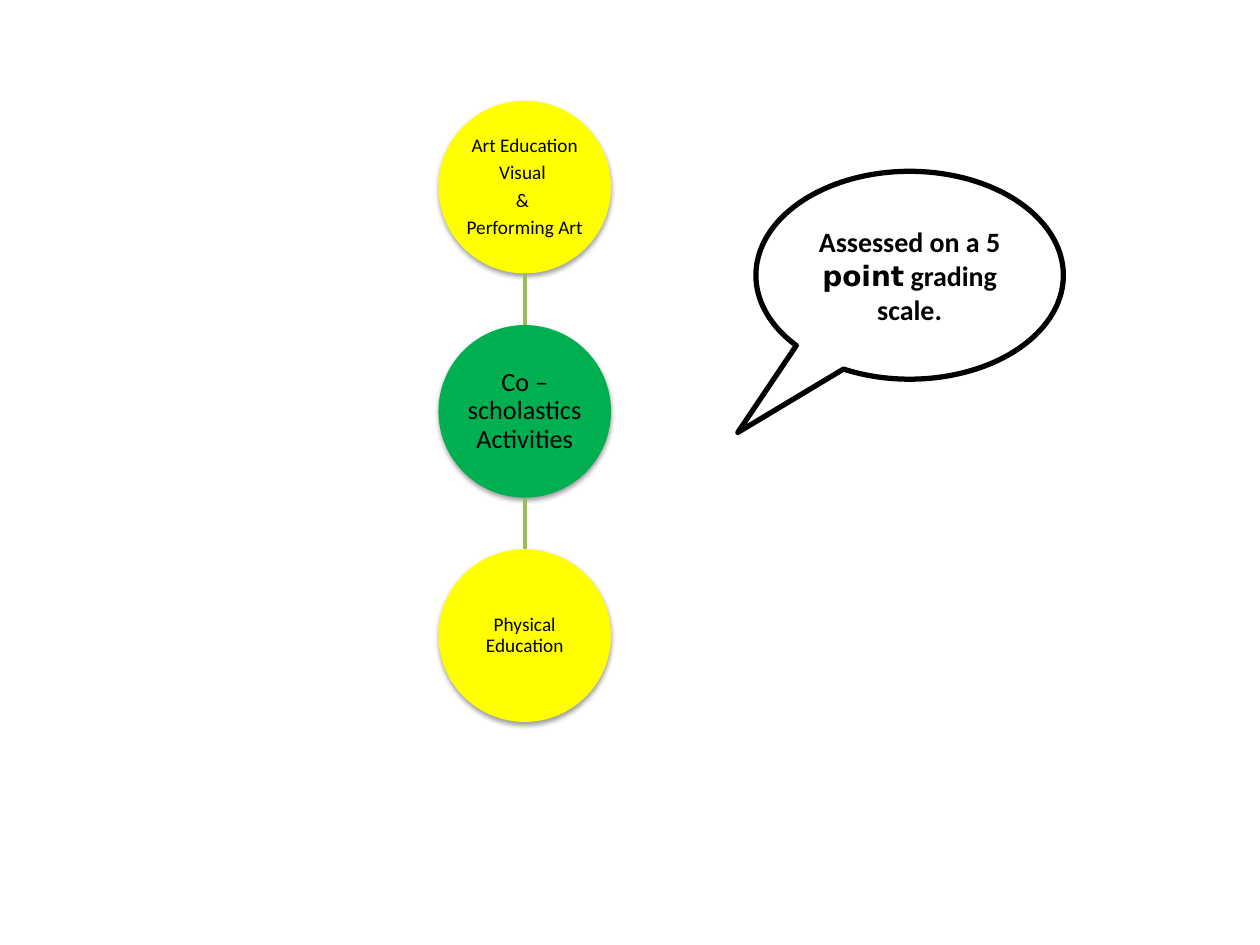
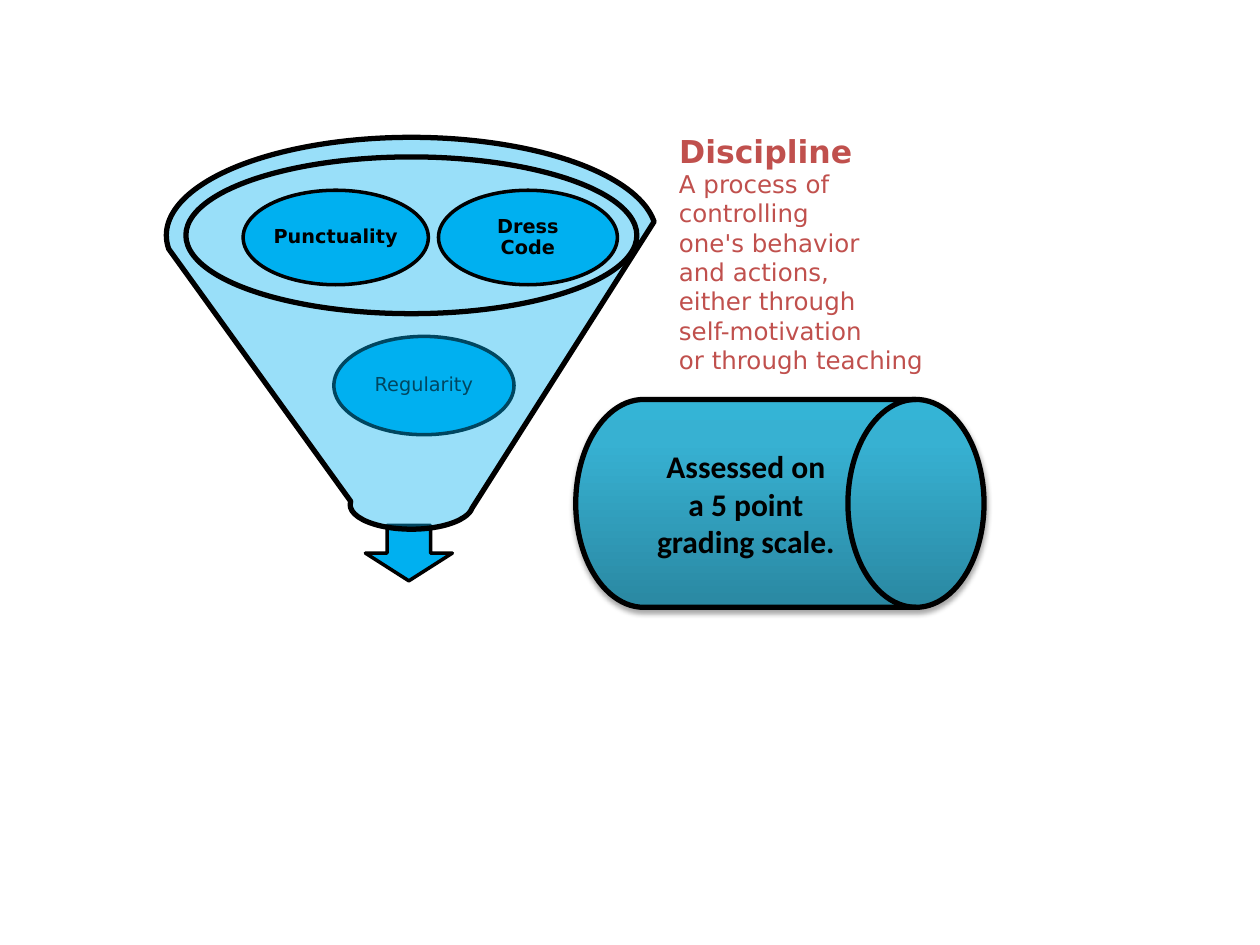
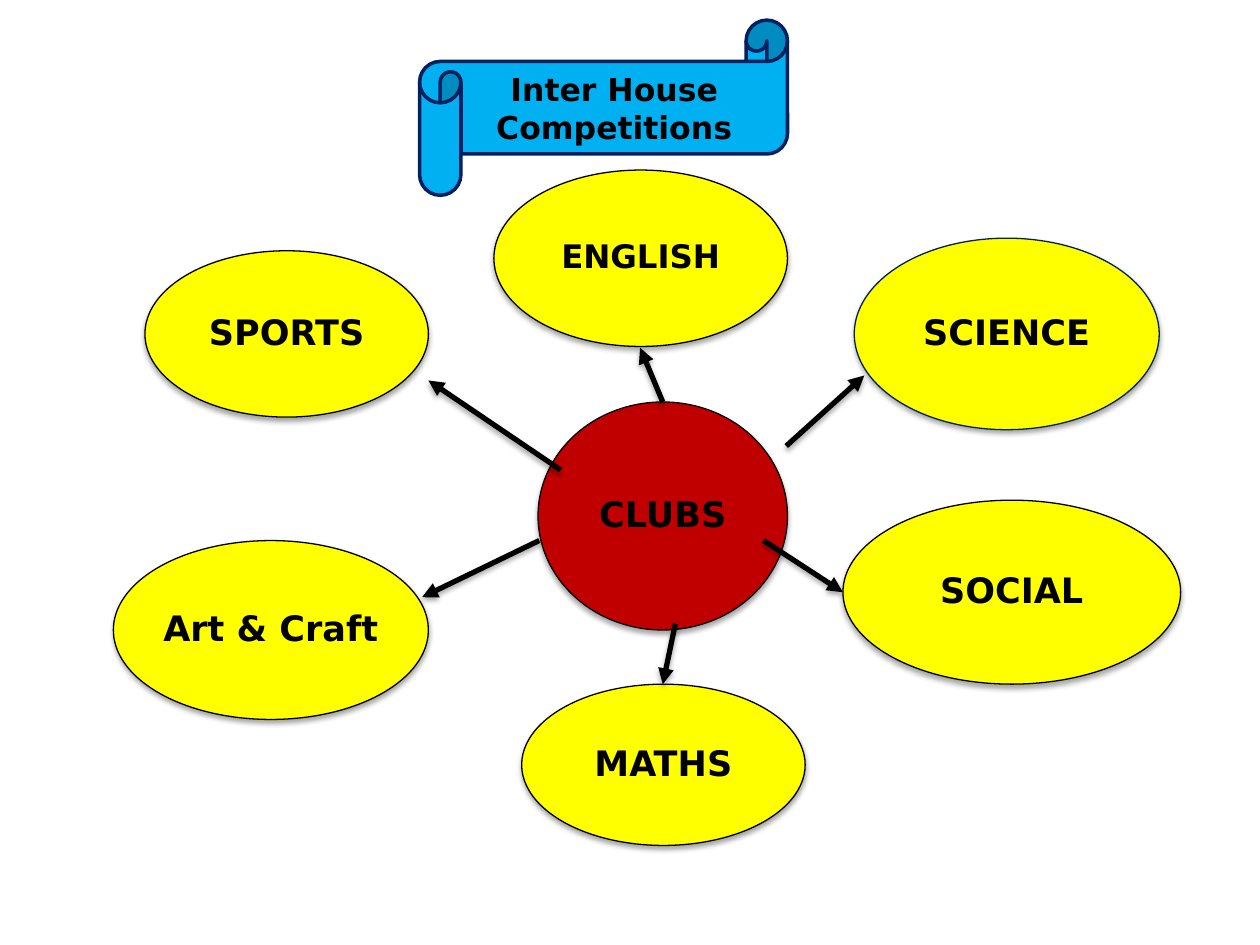
from copy import deepcopy
from dataclasses import dataclass

from pptx import Presentation
from pptx.dml.color import RGBColor
from pptx.enum.shapes import MSO_CONNECTOR as Connector, MSO_SHAPE as Preset
from pptx.enum.text import MSO_ANCHOR as Anchor, MSO_AUTO_SIZE as AutoSize, PP_ALIGN as Align
from pptx.oxml import parse_xml
from pptx.oxml.ns import nsdecls, qn
from pptx.util import Inches, Pt


@dataclass(frozen=True)
class Theme:
    black: str = "000000"
    yellow: str = "FFFF00"
    green: str = "00B050"
    olive: str = "9BBB59"
    sky: str = "00B0F0"
    navy: str = "002060"
    red: str = "C00000"
    brick: str = "C0504D"
    drum: tuple = ((0, "2A88A2"), (0.8, "37B1D2"), (1, "34B4D6"))
    body_font: str = "Calibri"
    display_font: str = "DejaVu Sans"
    small: float = 11
    text: float = 14
    core: float = 15
    callout: float = 16
    heading: float = 18
    english: float = 18.5
    club: float = 20
    hairline: float = 0.75
    outline: float = 2
    heavy: float = 3


@dataclass(frozen=True)
class Box:
    left: float
    top: float
    width: float
    height: float

    def inner(self, dx, dy, width, height):
        return Box(self.left + dx, self.top + dy, width, height)

    def inches(self):
        return [Inches(v) for v in (self.left, self.top, self.width, self.height)]


THEME = Theme()
LAYOUT_TITLE_ONLY, LAYOUT_BLANK = 5, 6


# Shared formatting
def apply(target, values):
    for name, value in values.items():
        setattr(target, name, value)


def set_shadow(shape, strength=35, distance=1.8):
    """Soft shadow straight below the shape; strength 0 means none."""
    effects = parse_xml(f"<a:effectLst {nsdecls('a')}/>")
    if strength:
        effects.append(parse_xml(
            f'<a:outerShdw {nsdecls("a")} blurRad="{Pt(3.1)}" dist="{Pt(distance)}" '
            f'dir="5400000" rotWithShape="0"><a:srgbClr val="000000">'
            f'<a:alpha val="{strength * 1000}"/></a:srgbClr></a:outerShdw>'))
    shape._element.spPr.append(effects)


def set_line(shape, color, width):
    if color is None:
        shape.line.fill.background()
        return
    shape.line.color.rgb = RGBColor.from_string(color)
    shape.line.width = Pt(width)


def set_fill(shape, color, opacity=100):
    if color is None:
        shape.fill.background()
        return
    shape.fill.solid()
    shape.fill.fore_color.rgb = RGBColor.from_string(color)
    if opacity < 100:
        tint = shape._element.spPr.find(qn("a:solidFill"))[0]
        tint.append(parse_xml(f'<a:alpha {nsdecls("a")} val="{opacity * 1000}"/>'))


def set_gradient(shape, stops):
    fill = shape.fill
    fill.gradient()
    fill.gradient_angle = 90
    stop_list = shape._element.spPr.find(qn("a:gradFill")).find(qn("a:gsLst"))
    while len(stop_list) < len(stops):
        stop_list.append(deepcopy(stop_list[-1]))
    for stop, (position, color) in zip(fill.gradient_stops, stops):
        stop.position = position
        stop.color.rgb = RGBColor.from_string(color)


def write(shape, lines, size, font=THEME.display_font, bold=False, color=THEME.black,
          align=Align.CENTER, anchor=Anchor.MIDDLE, inset=None, tight=False):
    """Each line is a string or a list of (text, font) spans."""
    frame = shape.text_frame
    apply(frame, {"word_wrap": True, "auto_size": AutoSize.NONE, "vertical_anchor": anchor})
    if inset is not None:
        sides = ("left", "right", "top", "bottom")
        apply(frame, {f"margin_{side}": Inches(inset) for side in sides})
    for number, line in enumerate(lines):
        para = frame.add_paragraph() if number else frame.paragraphs[0]
        para.alignment = align
        if tight:
            para.line_spacing = 0.9
            if number < len(lines) - 1:
                para.space_after = Pt(0.35 * size)
        for text, face in [(line, font)] if isinstance(line, str) else line:
            span = para.add_run()
            span.text = text
            apply(span.font, {"name": face, "size": Pt(size), "bold": bold})
            span.font.color.rgb = RGBColor.from_string(color)


def add_preset(page, kind, box, fill=None, line=None, width=THEME.outline, opacity=100):
    shape = page.shapes.add_shape(kind, *box.inches())
    shape.shadow.inherit = False
    set_fill(shape, fill, opacity)
    set_line(shape, line, width)
    return shape


def replace_shadow(shape, **values):
    shape.shadow.inherit = True
    set_shadow(shape, **values)


def add_line(page, start, end, color, width):
    line = page.shapes.add_connector(Connector.STRAIGHT, *map(Inches, (*start, *end)))
    set_line(line, color, width)
    return line


def add_arrow(page, start, end):
    arrow = add_line(page, start, end, THEME.black, THEME.heavy)
    arrow.line._get_or_add_ln().append(parse_xml(f'<a:tailEnd {nsdecls("a")} type="triangle"/>'))
    set_shadow(arrow)


def place_title(page, box, text, **style):
    title = page.shapes.title
    apply(title, dict(zip(("left", "top", "width", "height"), box.inches())))
    write(title, [text], THEME.heading, bold=True, **style)
    page.shapes._spTree.append(title._element)  # in front of its backdrop


# Slide 1: chain of activities
def add_activity_chain(page, box):
    circles = [
        (["Art Education", "Visual ", "& ", "Performing Art"], THEME.yellow, THEME.small),
        (["Co –scholastics Activities"], THEME.green, THEME.core),
        (["Physical Education"], THEME.yellow, THEME.small),
    ]
    size = box.width
    step = (box.height - size) / (len(circles) - 1)
    middle = box.left + size / 2
    for row, (lines, color, text_size) in enumerate(circles):
        spot = box.inner(0, row * step, size, size)
        circle = add_preset(page, Preset.OVAL, spot, color)
        replace_shadow(circle, strength=38, distance=1.6)
        write(circle, lines, text_size, THEME.body_font, inset=0.01, tight=True)
        if row:
            link = add_line(page, (middle, spot.top - step + size), (middle, spot.top),
                            THEME.olive, THEME.outline)
            set_shadow(link, strength=0)


def add_grading_callout(page, box):
    callout = add_preset(page, Preset.OVAL_CALLOUT, box, None, THEME.black, THEME.heavy)
    callout.adjustments[0], callout.adjustments[1] = -0.559, 0.756
    spans = [("Assessed on a 5 ", THEME.body_font), ("point", THEME.display_font),
             (" grading scale.", THEME.body_font)]
    write(callout, [spans], THEME.callout, bold=True)


# Slide 2: discipline funnel
def add_funnel(page, box):
    add_preset(page, Preset.OVAL, box.inner(0.16, 0.17, 3.58, 1.24), THEME.sky, opacity=40)
    add_preset(page, Preset.DOWN_ARROW, box.inner(1.58, 3.08, 0.69, 0.44),
               THEME.sky, THEME.black)
    habits = [
        ("Dress Code", True, (2.16, 0.42, 1.42, 0.75)),
        ("Punctuality", True, (0.61, 0.42, 1.47, 0.75)),
        ("Regularity", False, (1.33, 1.58, 1.43, 0.78)),
    ]
    for label, bold, place in habits:
        habit = add_preset(page, Preset.OVAL, box.inner(*place), THEME.sky, THEME.black)
        write(habit, [label], THEME.small, bold=bold, inset=0.02, tight=True)
    add_preset(page, Preset.FUNNEL, box, THEME.sky, THEME.black, THEME.heavy, opacity=40)


def add_grading_drum(page, box):
    drum = add_preset(page, Preset.FLOWCHART_DIRECT_ACCESS_STORAGE, box,
                      None, THEME.black, THEME.heavy)
    set_gradient(drum, THEME.drum)
    replace_shadow(drum)
    write(drum, ["Assessed on a 5 point grading scale."], THEME.heading,
          THEME.body_font, bold=True)


def add_definition(page, box):
    style = {"color": THEME.brick, "align": Align.LEFT, "anchor": Anchor.TOP}
    title_height = 0.39
    place_title(page, box.inner(0, 0, box.width, title_height), "Discipline", **style)
    body = box.inner(0, 0.29, box.width, box.height - 0.29)
    note = page.shapes.add_textbox(*body.inches())
    write(note, ["A process of", "controlling", "one's behavior", "and actions,",
                 "either through", "self-motivation", "or through teaching"],
          THEME.text, **style)


# Slide 3: clubs around a hub
def add_club(page, box, label, fill=THEME.yellow, line=THEME.black, size=THEME.club):
    club = add_preset(page, Preset.OVAL, box, fill, line, THEME.hairline)
    replace_shadow(club)
    write(club, [label], size, bold=True, inset=0.01, tight=True)


def add_club_map(page, box):
    add_club(page, box.inner(3.37, 1.84, 1.98, 1.81), "CLUBS", THEME.red)
    clubs = [
        ("ENGLISH", (3.02, 0, 2.33, 1.4), {"size": THEME.english}),
        ("SCIENCE", (5.88, 0.54, 2.42, 1.52), {"line": THEME.navy}),
        ("SOCIAL", (5.79, 2.62, 2.68, 1.46), {}),
        ("MATHS", (3.24, 4.08, 2.25, 1.28), {}),
        ("Art & Craft", (0, 2.94, 2.5, 1.42), {}),
        ("SPORTS", (0.25, 0.64, 2.25, 1.32), {}),
    ]
    for label, place, style in clubs:
        add_club(page, box.inner(*place), label, **style)


def add_club_arrows(page, box):
    arrows = [
        ((4.46, 3.6), (4.36, 4.08)),
        ((5.16, 2.94), (5.79, 3.35)),
        ((5.34, 2.19), (5.96, 1.63)),
        ((4.36, 1.84), (4.18, 1.41)),
        ((3.38, 2.94), (2.45, 3.39)),
        ((3.55, 2.38), (2.5, 1.67)),
    ]
    for ends in arrows:
        add_arrow(page, *[(box.left + x, box.top + y) for x, y in ends])


def add_scroll_title(page, box):
    scroll = add_preset(page, Preset.HORIZONTAL_SCROLL, box, THEME.sky, THEME.navy)
    scroll.adjustments[0] = 0.236
    place_title(page, box.inner(0.33, 0.33, 2.43, 0.73), "Inter House Competitions")


def main():
    deck = Presentation()
    deck.slide_width, deck.slide_height = Inches(10), Inches(7.5)
    layouts = deck.slide_layouts

    page = deck.slides.add_slide(layouts[LAYOUT_BLANK])
    add_grading_callout(page, Box(6, 1.36, 2.44, 1.65))
    add_activity_chain(page, Box(3.48, 0.8, 1.37, 4.93))

    page = deck.slides.add_slide(layouts[LAYOUT_TITLE_ONLY])
    add_funnel(page, Box(1.32, 1.09, 3.89, 3.11))
    add_grading_drum(page, Box(4.57, 3.17, 3.24, 1.65))
    add_definition(page, Box(5.29, 1, 4.5, 2.05))

    page = deck.slides.add_slide(layouts[LAYOUT_TITLE_ONLY])
    club_area = Box(0.9, 1.35, 8.47, 5.36)
    add_club_map(page, club_area)
    add_scroll_title(page, Box(3.33, 0.16, 2.92, 1.39))
    add_club_arrows(page, club_area)

    deck.save("out.pptx")


if __name__ == "__main__":
    main()
